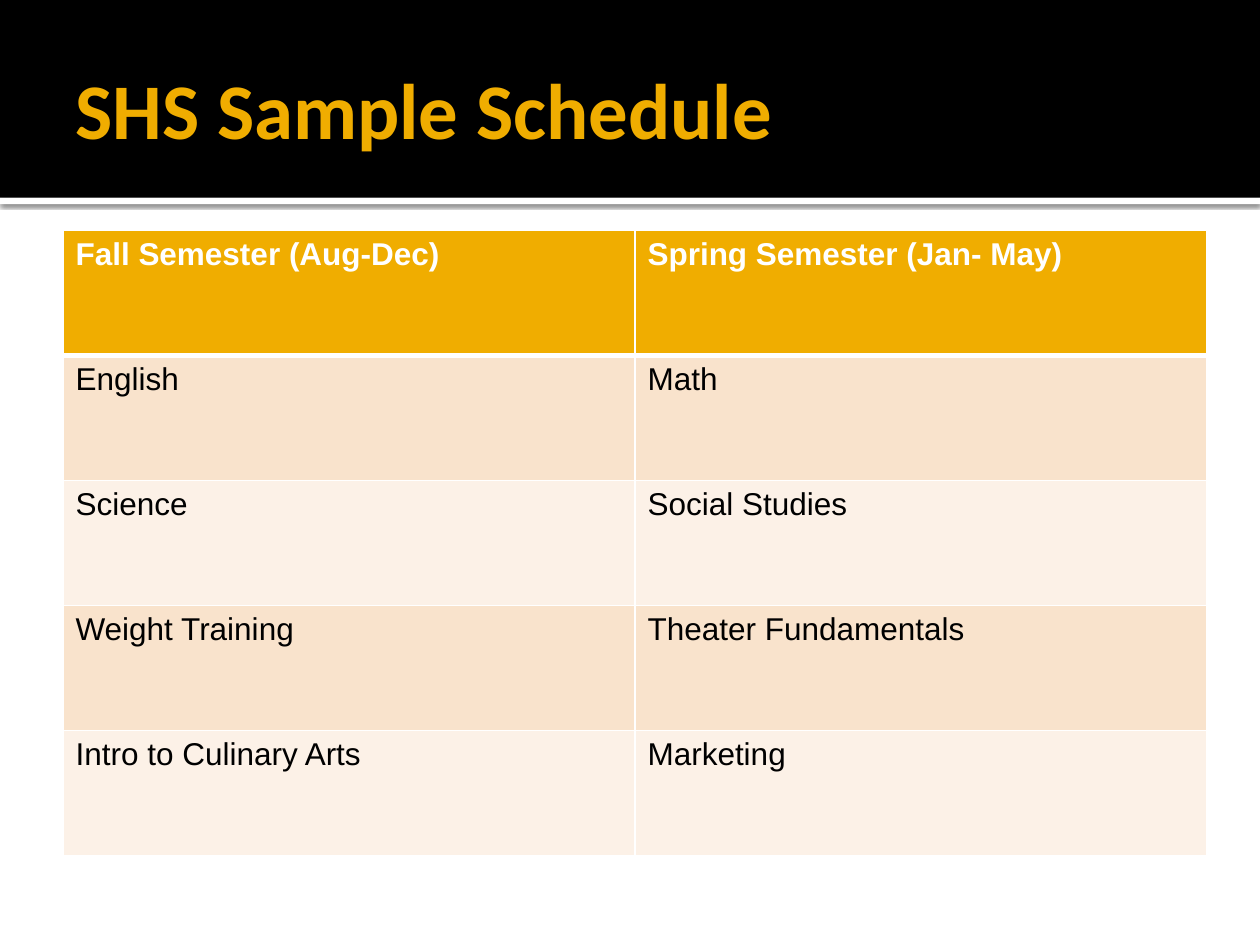
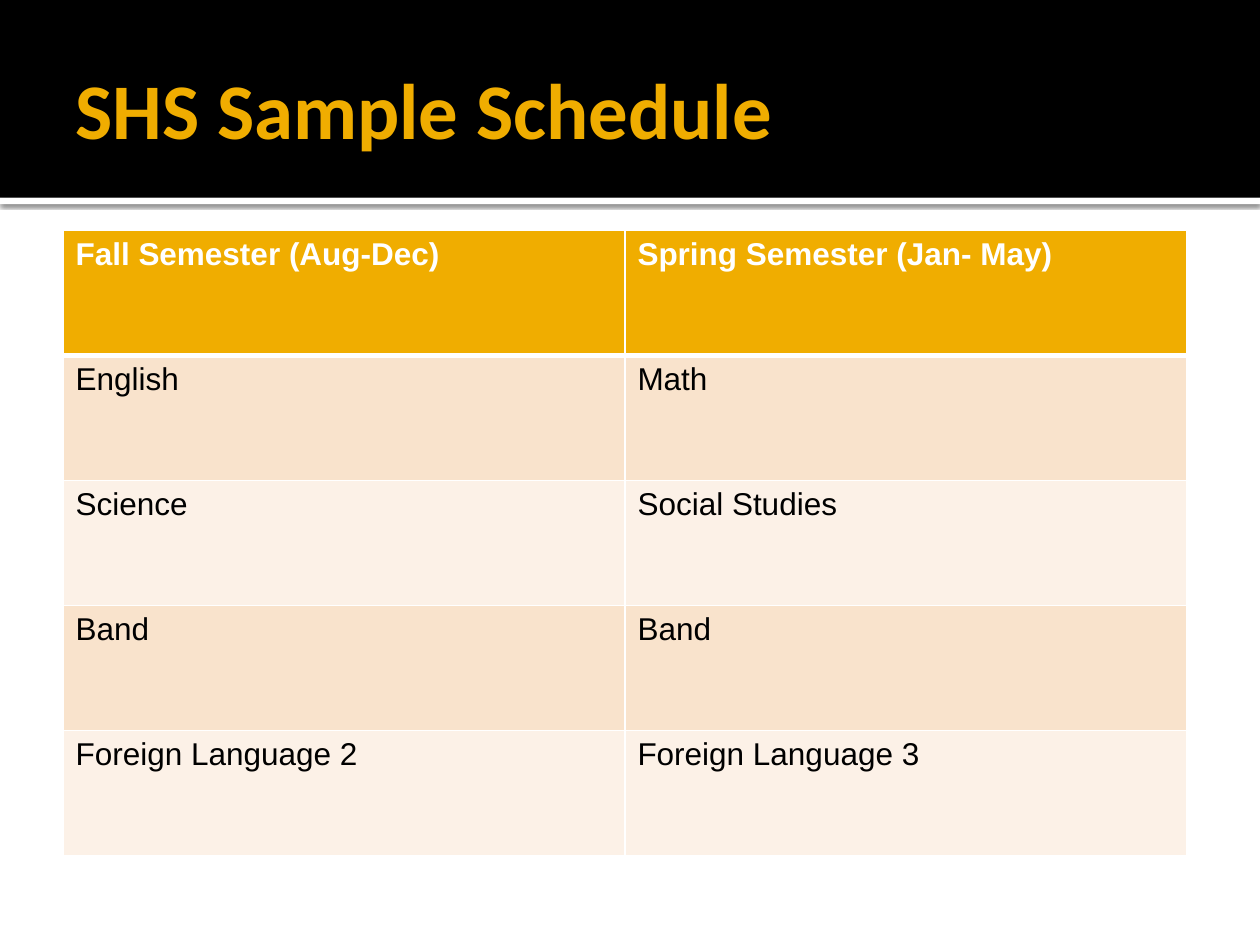
from lxml import etree
from pptx import Presentation
from pptx import util as u
from pptx.dml.color import RGBColor
from pptx.enum import shapes, text
from pptx.oxml import ns

# Shared look
GOLD = RGBColor(0xF0, 0xAD, 0x00)
PEACH = RGBColor(0xF9, 0xE3, 0xCC)
CREAM = RGBColor(0xFC, 0xF1, 0xE7)
BLACK = RGBColor(0, 0, 0)
WHITE = RGBColor(0xFF, 0xFF, 0xFF)
TITLE_FONT = "Calibri"
BODY_FONT = "Arial"

SLIDE_WIDTH, SLIDE_HEIGHT = 10, 7.5
BAND_HEIGHT = 1.57
TABLE_LEFT, TABLE_TOP, TABLE_HEIGHT = 0.5, 1.83, 4.96

TITLE = "SHS Sample Schedule"
SEMESTERS = ("Fall Semester (Aug-Dec)", "Spring Semester (Jan- May)")
CORE_COURSES = [("English", "Math"), ("Science", "Social Studies")]

# Column width and elective courses of each sample schedule
SCHEDULES = [
    (4.54, [("Weight Training", "Theater Fundamentals"),
            ("Intro to Culinary Arts", "Marketing")]),
    (4.46, [("Band", "Band"),
            ("Foreign Language 2", "Foreign Language 3")]),
]


def write(frame, words, *, font, size, color, bold=False):
    paragraph = frame.paragraphs[0]
    paragraph.alignment = text.PP_ALIGN.LEFT
    run = paragraph.add_run()
    run.text = words
    run.font.name = font
    run.font.size = u.Pt(size)
    run.font.color.rgb = color
    run.font.bold = bold


def add_child(parent, tag, **attributes):
    child = etree.SubElement(parent, ns.qn(tag))
    for name, value in attributes.items():
        child.set(name, str(value))
    return child


def add_band(slide, top, height, color):
    band = slide.shapes.add_shape(
        shapes.MSO_SHAPE.RECTANGLE, 0, u.Inches(top),
        u.Inches(SLIDE_WIDTH), u.Inches(height))
    band.shadow.inherit = False
    band.fill.solid()
    band.fill.fore_color.rgb = color
    band.line.fill.background()
    return band


def drop_shadow(shape):
    effects = shape.element.spPr.find(ns.qn("a:effectLst"))
    shadow = add_child(effects, "a:outerShdw", blurRad=u.Pt(2.5),
                       dist=u.Pt(0.8), dir=90 * 60000, algn="t",
                       rotWithShape=0)
    tint = add_child(shadow, "a:srgbClr", val=BLACK)
    add_child(tint, "a:alpha", val=60000)


def add_title(slide, words):
    title = slide.shapes.title
    title.left, title.top = u.Inches(0.5), u.Inches(0.17)
    title.width, title.height = u.Inches(9), u.Inches(1.37)
    frame = title.text_frame
    frame.auto_size = text.MSO_AUTO_SIZE.NONE
    frame.word_wrap = True
    frame.vertical_anchor = text.MSO_ANCHOR.MIDDLE
    frame.margin_left = u.Inches(0.1)
    frame.margin_top = frame.margin_right = frame.margin_bottom = u.Inches(0.05)
    write(frame, words, font=TITLE_FONT, size=45, color=GOLD, bold=True)
    # Bring the title in front of the black band
    title.element.getparent().append(title.element)


def set_borders(cell, **widths):
    properties = cell._tc.get_or_add_tcPr()
    for side in "LRTB":
        border = add_child(properties, f"a:ln{side}",
                           w=u.Pt(widths.get(side, 1)))
        add_child(add_child(border, "a:solidFill"), "a:srgbClr", val=WHITE)


def add_schedule(slide, column_width, courses):
    rows = [SEMESTERS, *courses]
    table = slide.shapes.add_table(
        len(rows), len(SEMESTERS), u.Inches(TABLE_LEFT), u.Inches(TABLE_TOP),
        u.Inches(column_width * len(SEMESTERS)), u.Inches(TABLE_HEIGHT)).table
    for column in table.columns:
        column.width = u.Inches(column_width)
    for r, names in enumerate(rows):
        header = r == 0
        fill = GOLD if header else PEACH if r % 2 else CREAM
        for c, name in enumerate(names):
            cell = table.cell(r, c)
            # A thick rule parts the header from the courses
            set_borders(cell, B=3 if header else 1, T=3 if r == 1 else 1)
            cell.fill.solid()
            cell.fill.fore_color.rgb = fill
            write(cell.text_frame, name, font=BODY_FONT, size=18,
                  color=WHITE if header else BLACK, bold=header)


def main():
    deck = Presentation()
    deck.slide_width = u.Inches(SLIDE_WIDTH)
    deck.slide_height = u.Inches(SLIDE_HEIGHT)
    title_only = deck.slide_layouts.get_by_name("Title Only")
    for column_width, electives in SCHEDULES:
        slide = deck.slides.add_slide(title_only)
        drop_shadow(add_band(slide, BAND_HEIGHT, 0.05, WHITE))
        add_band(slide, 0, BAND_HEIGHT, BLACK)
        add_title(slide, TITLE)
        add_schedule(slide, column_width, CORE_COURSES + electives)
    deck.save("out.pptx")


if __name__ == "__main__":
    main()
